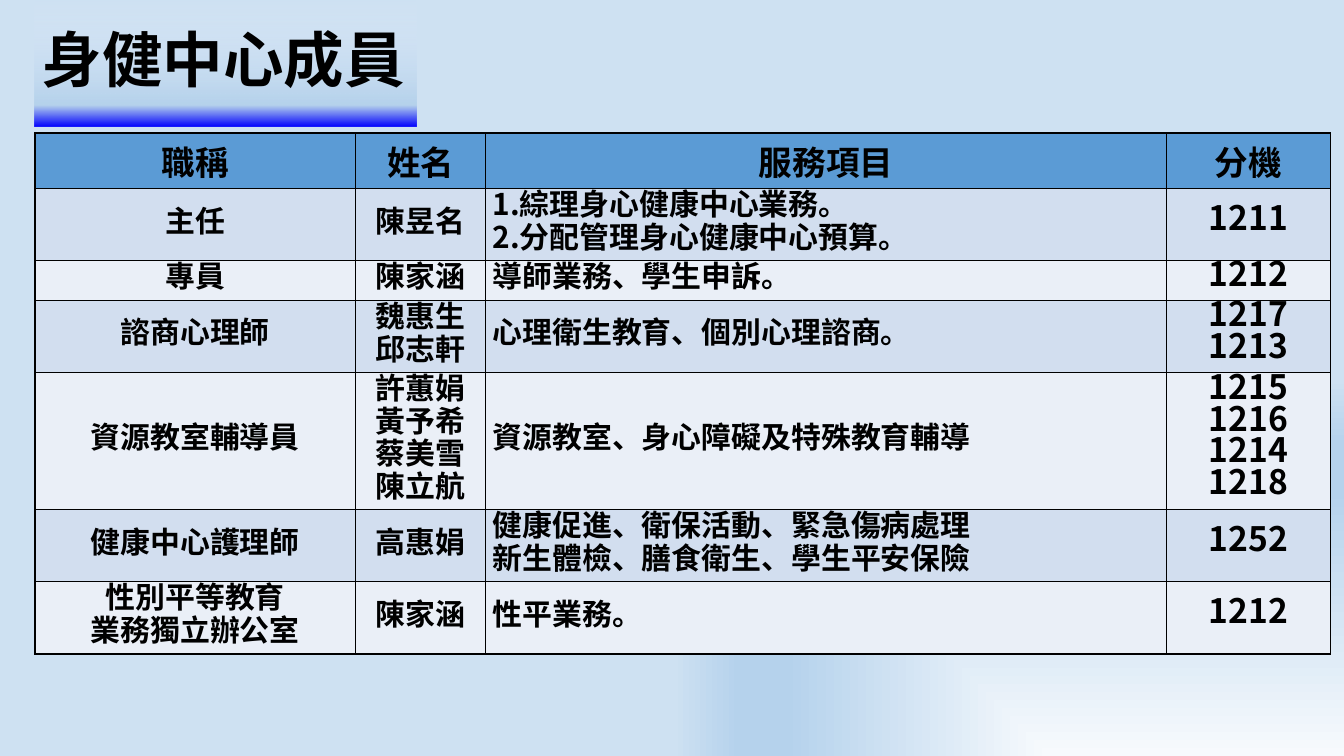
from lxml import etree
from pptx import Presentation
from pptx.dml.color import RGBColor
from pptx.enum.text import MSO_ANCHOR as Anchor, MSO_AUTO_SIZE as AutoSize, PP_ALIGN as Align
from pptx.oxml.ns import qn
from pptx.util import Inches, Pt

BLACK = RGBColor(0x00, 0x00, 0x00)
BLUE = RGBColor(0x00, 0x00, 0xFF)
HEADER_BLUE = RGBColor(0x5B, 0x9B, 0xD5)
BAND_DARK = RGBColor(0xD2, 0xDE, 0xEF)
BAND_LIGHT = RGBColor(0xEA, 0xEF, 0xF7)
SKY = RGBColor(0xB5, 0xD2, 0xEC)
PALE_SKY = RGBColor(0xCE, 0xE1, 0xF2)
MIST = RGBColor(0xE1, 0xEB, 0xFB)
NEAR_WHITE = RGBColor(0xF7, 0xFA, 0xFD)

COLUMN_WIDTHS = [4.77, 1.94, 10.13, 2.44]
ROW_HEIGHTS = [0.68, 1.06, 0.58, 1.06, 1.55, 1.06, 1.06]
SERVICE_COLUMN, EXTENSION_COLUMN = 2, 3
HEADINGS = ["職稱", "姓名", "服務項目", "分機"]
MEMBERS = [
    ["主任", "陳昱名", "1.綜理身心健康中心業務。\n2.分配管理身心健康中心預算。", "1211"],
    ["專員", "陳家涵", "導師業務、學生申訴。", "1212"],
    ["諮商心理師", "魏惠生\n邱志軒", "心理衛生教育、個別心理諮商。", "1217\n1213"],
    ["資源教室輔導員", "許蕙娟\n黃予希\n蔡美雪\n陳立航",
     "資源教室、身心障礙及特殊教育輔導", "1215\n1216\n1214\n1218"],
    ["健康中心護理師", "高惠娟",
     "健康促進、衛保活動、緊急傷病處理\n新生體檢、膳食衛生、學生平安保險", "1252"],
    ["性別平等教育\n業務獨立辦公室", "陳家涵", "性平業務。", "1212"],
]


class SlideBuilder:
    font_name = "Noto Sans CJK SC"
    thin, thick = Pt(1), Pt(2.25)

    def __init__(self, slide):
        self.slide = slide

    def gradient(self, parent, stops, direction):
        """Replace the solid fill in parent; stops are (percent, colour, opacity percent)."""
        fill = etree.Element(qn("a:gradFill"), rotWithShape="1")
        stop_list = etree.SubElement(fill, qn("a:gsLst"))
        for percent, color, opacity in stops:
            stop = etree.SubElement(stop_list, qn("a:gs"), pos=str(percent * 1000))
            tint = etree.SubElement(stop, qn("a:srgbClr"), val=str(color))
            if opacity < 100:
                etree.SubElement(tint, qn("a:alpha"), val=str(opacity * 1000))
        fill.append(direction)
        parent.replace(parent.find(qn("a:solidFill")), fill)

    def background(self, stops):
        self.slide.background.fill.solid()
        properties = self.slide._element.xpath("p:cSld/p:bg/p:bgPr")[0]
        corner = etree.Element(qn("a:path"), path="rect")
        etree.SubElement(corner, qn("a:fillToRect"), l="100000", t="100000")
        self.gradient(properties, stops, corner)

    def format_text(self, frame, size, align, spacing):
        for paragraph in frame.paragraphs:
            paragraph.alignment = align
            paragraph.line_spacing = spacing
            for run in paragraph.runs:
                font = run.font
                font.size, font.bold, font.name = size, True, self.font_name
                font.color.rgb = BLACK
                latin = run._r.rPr.find(qn("a:latin"))
                latin.addnext(etree.Element(qn("a:ea"), typeface=self.font_name))

    def title(self, text, left, top, width, height, stops):
        title = self.slide.shapes.title
        title.left, title.top = Inches(left), Inches(top)
        title.width, title.height = Inches(width), Inches(height)
        title.fill.solid()
        upward = etree.Element(qn("a:lin"), ang=str(270 * 60000), scaled="0")
        self.gradient(title._element.spPr, stops, upward)
        frame = title.text_frame
        frame.text = text
        frame.auto_size = AutoSize.NONE
        frame.vertical_anchor = Anchor.MIDDLE
        self.format_text(frame, Pt(64.8), Align.LEFT, 0.9)

    def borders(self, cell, outer_edges):
        """Draw thin borders, thick along the edges flagged in L, R, T, B order."""
        properties = cell._tc.get_or_add_tcPr()
        for side, is_outer in zip("LRTB", outer_edges):
            width = self.thick if is_outer else self.thin
            line = etree.SubElement(properties, qn(f"a:ln{side}"), w=str(width))
            fill = etree.SubElement(line, qn("a:solidFill"))
            etree.SubElement(fill, qn("a:srgbClr"), val=str(BLACK))

    def member_table(self, left, top):
        rows = [HEADINGS] + MEMBERS
        last_row, last_column = len(rows) - 1, len(HEADINGS) - 1
        table = self.slide.shapes.add_table(
            len(rows), len(HEADINGS), Inches(left), Inches(top),
            Inches(sum(COLUMN_WIDTHS)), Inches(sum(ROW_HEIGHTS))).table
        for column, width in zip(table.columns, COLUMN_WIDTHS):
            column.width = Inches(width)
        for row, height in zip(table.rows, ROW_HEIGHTS):
            row.height = Inches(height)

        for r, texts in enumerate(rows):
            for c, text in enumerate(texts):
                cell = table.cell(r, c)
                cell.text_frame.text = text
                cell.vertical_anchor = Anchor.MIDDLE
                self.borders(cell, (c == 0, c == last_column, r == 0, r == last_row))
                cell.fill.solid()
                if r == 0:
                    color, size, spacing = HEADER_BLUE, Pt(36), None
                else:
                    color = BAND_DARK if r % 2 else BAND_LIGHT
                    is_extension = c == EXTENSION_COLUMN
                    size, spacing = (Pt(36), Pt(34)) if is_extension else (Pt(32), Pt(35))
                cell.fill.fore_color.rgb = color
                is_service = r > 0 and c == SERVICE_COLUMN
                align = Align.LEFT if is_service else Align.CENTER
                self.format_text(cell.text_frame, size, align, spacing)


def main():
    presentation = Presentation()
    presentation.slide_width, presentation.slide_height = Inches(20), Inches(11.25)
    title_only = presentation.slide_layouts[5]
    builder = SlideBuilder(presentation.slides.add_slide(title_only))
    builder.background([(0, NEAR_WHITE, 100), (70, SKY, 100),
                        (82, SKY, 100), (100, PALE_SKY, 100)])
    builder.member_table(0.52, 1.98)
    builder.title("身健中心成員", 0.52, 0, 5.68, 1.88,
                  [(0, BLUE, 100), (17, SKY, 100), (100, MIST, 0)])
    presentation.save("out.pptx")


if __name__ == "__main__":
    main()
